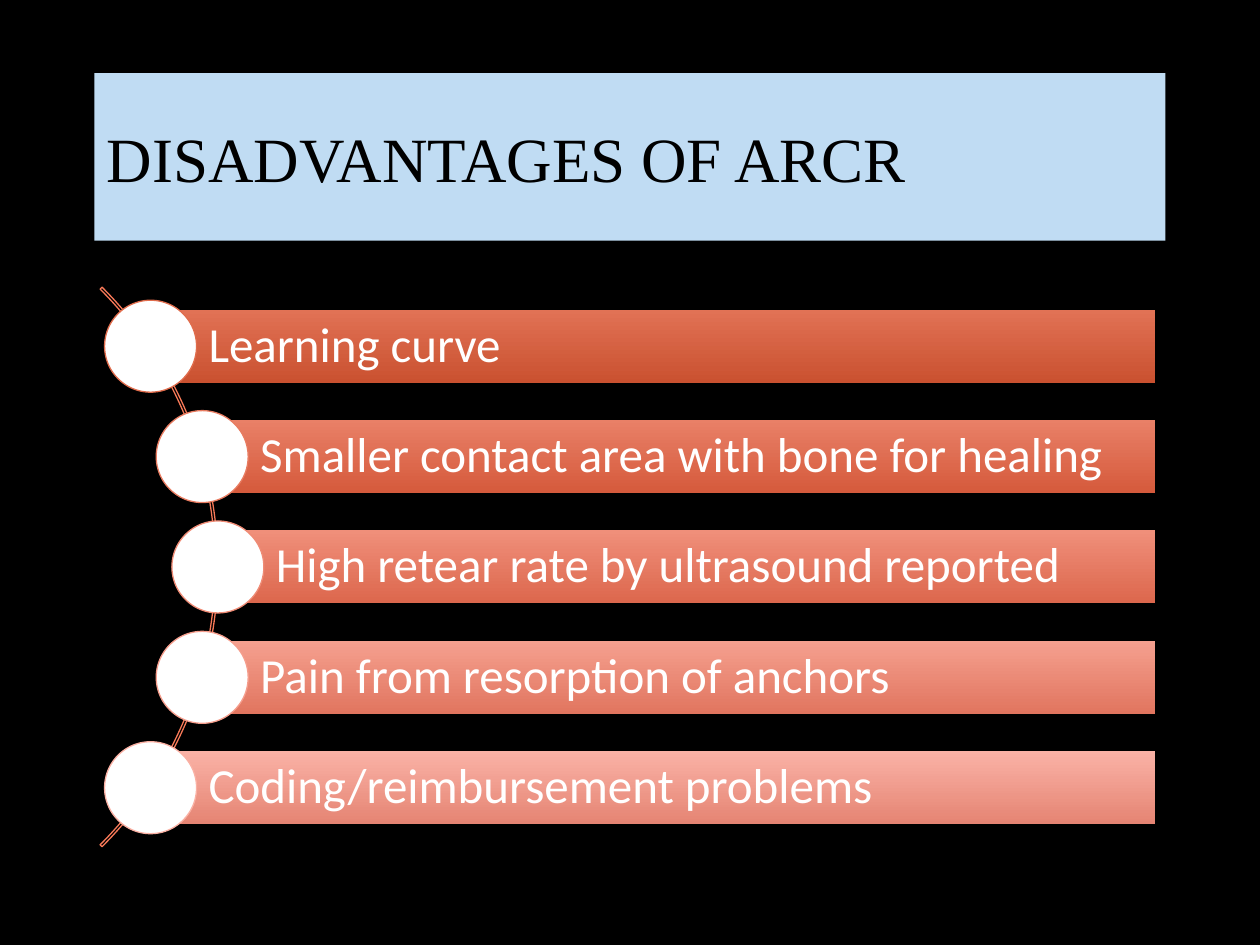
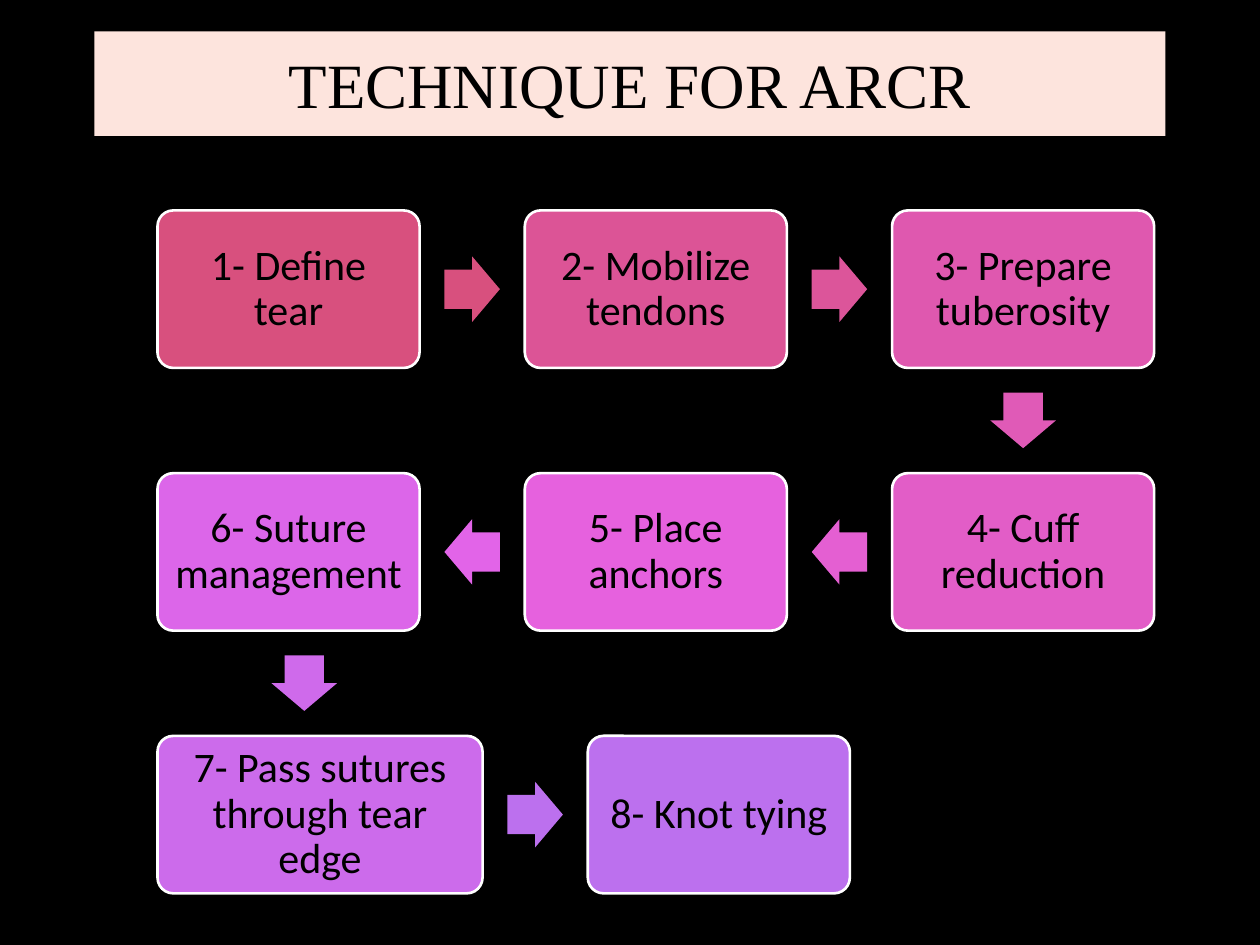
from dataclasses import dataclass
from math import sqrt

from pptx import Presentation
from pptx.dml.color import RGBColor
from pptx.enum.shapes import MSO_SHAPE as Shape
from pptx.enum.text import MSO_ANCHOR as Anchor, PP_ALIGN as Align
from pptx.util import Inches, Pt


@dataclass(frozen=True)
class Theme:
    """Colours, fonts and type sizes shared by the slides."""
    background: str = "000000"
    dark: str = "000000"
    light: str = "FFFFFF"
    title_blue: str = "C0DCF3"
    title_peach: str = "FDE4DD"
    arc: str = "F77958"
    title_font: str = "Times New Roman"
    body_font: str = "Calibri"
    title_size: int = 36
    bar_size: int = 28
    step_size: int = 24


@dataclass(frozen=True)
class Box:
    """A rectangle in inches."""
    left: float
    top: float
    width: float
    height: float

    @property
    def right(self):
        """Return the right edge."""
        return self.left + self.width

    @property
    def center(self):
        """Return the middle point."""
        return self.left + self.width / 2, self.top + self.height / 2


THEME = Theme()

DRAWBACKS = [
    ("Learning curve", "E17255", "CA5130", "E06C4C"),
    ("Smaller contact area with bone for healing", "E98067", "D55A3C", "E87B60"),
    ("High retear rate by ultrasound reported", "F08F7A", "DC674D", "EF8B75"),
    ("Pain from resorption of anchors", "F5A08F", "E1755F", "F59D8C"),
    ("Coding/reimbursement problems", "FAB2A6", "E58473", "FAB0A3"),
]

STEP_ROWS = [
    [("1- Define tear", "D8507E", 2.08), ("2- Mobilize tendons", "DC5496", 2.08),
     ("3- Prepare tuberosity", "DF58AF", 2.08)],
    [("4- Cuff reduction", "E25DC7", 2.08), ("5- Place anchors", "E661DE", 2.08),
     ("6- Suture management", "DC66E9", 2.08)],
    [("7- Pass sutures through tear edge", "CC6BEB", 2.58),
     ("8- Knot tying", "BC70EE", 2.08)],
]
ARROW_COLORS = ["D8507E", "DC559A", "E05AB7", "E45FD2", "E264E8", "CF6AEB", "BC70EE"]


def rgb(code):
    """Turn a hex code into a colour."""
    return RGBColor.from_string(code)


def centered(x, y, width, height):
    """Return a box around a middle point."""
    return Box(x - width / 2, y - height / 2, width, height)


def add_shape(page, kind, box, fill=None, line=None, weight=0.75, adjust=()):
    """Draw a preset shape; a pair of fill colours makes a vertical gradient."""
    shape = page.shapes.add_shape(
        kind, Inches(box.left), Inches(box.top), Inches(box.width), Inches(box.height))
    shape.shadow.inherit = False
    for index, value in enumerate(adjust):
        shape.adjustments[index] = value
    if fill is None:
        shape.fill.background()
    elif isinstance(fill, tuple):
        shape.fill.gradient()
        shape.fill.gradient_angle = 270
        for stop, color in zip(shape.fill.gradient_stops, fill):
            stop.color.rgb = rgb(color)
    else:
        shape.fill.solid()
        shape.fill.fore_color.rgb = rgb(fill)
    if line:
        shape.line.color.rgb = rgb(line)
        shape.line.width = Pt(weight)
    else:
        shape.line.fill.background()
    return shape


def write(shape, text, font=THEME.body_font, size=THEME.step_size, color=THEME.dark,
          align=Align.LEFT, spacing=0.9, inset=(0.1, 0.1, 0.1, 0.1)):
    """Put one formatted paragraph in a shape."""
    frame = shape.text_frame
    frame.word_wrap = True
    frame.vertical_anchor = Anchor.MIDDLE
    (frame.margin_left, frame.margin_top,
     frame.margin_right, frame.margin_bottom) = map(Inches, inset)
    para = frame.paragraphs[0]
    para.alignment = align
    para.line_spacing = spacing
    span = para.add_run()
    span.text = text
    span.font.name = font
    span.font.size = Pt(size)
    span.font.color.rgb = rgb(color)


def add_page(deck):
    """Add a blank page with the shared background."""
    page = deck.slides.add_slide(deck.slide_layouts[6])
    page.background.fill.solid()
    page.background.fill.fore_color.rgb = rgb(THEME.background)
    return page


def add_title(page, box, text, fill, align):
    """Draw the title band."""
    band = add_shape(page, Shape.RECTANGLE, box, fill)
    write(band, text, font=THEME.title_font, size=THEME.title_size, align=align,
          spacing=1.0, inset=(0.1, 0.05, 0.1, 0.05))


def add_curved_list(page, box, items, radius=3.14, bar_height=0.58, dot=0.73):
    """Draw bars whose round markers follow an arc on the left of the box."""
    middle = box.center[1]
    arc_x = box.left - radius / sqrt(2)
    add_shape(page, Shape.BLOCK_ARC, centered(arc_x, middle, 2 * radius, 2 * radius),
              line=THEME.arc, adjust=(189, 27, 0.0034))
    pitch = box.height / len(items)
    for index, (text, top_color, bottom_color, outline) in enumerate(items):
        y = box.top + pitch * (index + 0.5)
        x = arc_x + sqrt(radius ** 2 - (y - middle) ** 2)
        bar = add_shape(page, Shape.RECTANGLE,
                        Box(x, y - bar_height / 2, box.right - x, bar_height),
                        (top_color, bottom_color))
        write(bar, text, size=THEME.bar_size, color=THEME.light,
              inset=(0.46, 0.08, 0.08, 0.08))
        add_shape(page, Shape.OVAL, centered(x, y, dot, dot), THEME.light, outline)


def snake_boxes(box, rows, height, gap):
    """Return the step boxes in reading order, every second row running leftwards."""
    places = []
    for index, row in enumerate(rows):
        top = box.top + index * (height + gap)
        edge = box.right if index % 2 else box.left
        for _, _, width in row:
            left = edge - width if index % 2 else edge
            places.append(Box(left, top, width, height))
            edge += -(width + gap) if index % 2 else width + gap
    return places


def add_arrow(page, start, end, color):
    """Draw a block arrow in the middle of the gap between two steps."""
    if start.top != end.top:
        x, turn = (start.center[0] + end.center[0]) / 2, 90
    elif start.left < end.left:
        x, turn = (start.right + end.left) / 2, 0
    else:
        x, turn = (start.left + end.right) / 2, 180
    y = (start.center[1] + end.center[1]) / 2
    arrow = add_shape(page, Shape.RIGHT_ARROW, centered(x, y, 0.44, 0.52), color,
                      adjust=(0.6, 0.5))
    arrow.rotation = turn


def add_snake(page, box, rows, height=1.25, gap=0.835):
    """Draw the numbered steps and the arrows that join them."""
    places = snake_boxes(box, rows, height, gap)
    steps = [step for row in rows for step in row]
    for (text, color, _), place in zip(steps, places):
        card = add_shape(page, Shape.ROUNDED_RECTANGLE, place, color, THEME.light,
                         weight=1.5, adjust=(0.1,))
        write(card, text, align=Align.CENTER)
    for start, end, color in zip(places, places[1:], ARROW_COLORS):
        add_arrow(page, start, end, color)


def build_disadvantages(deck):
    """Build the slide of drawbacks."""
    page = add_page(deck)
    add_title(page, Box(0.75, 0.58, 8.5, 1.33), "DISADVANTAGES OF ARCR",
              THEME.title_blue, Align.LEFT)
    add_curved_list(page, Box(0.81, 2.31, 8.36, 4.38), DRAWBACKS)


def build_technique(deck):
    """Build the slide of surgical steps."""
    page = add_page(deck)
    add_title(page, Box(0.75, 0.25, 8.5, 0.83), "TECHNIQUE FOR ARCR",
              THEME.title_peach, Align.CENTER)
    add_snake(page, Box(1.25, 1.67, 7.91, 5.42), STEP_ROWS)


def main():
    """Build and save the deck."""
    deck = Presentation()
    deck.slide_width, deck.slide_height = Inches(10), Inches(7.5)
    build_disadvantages(deck)
    build_technique(deck)
    deck.save("out.pptx")


if __name__ == "__main__":
    main()
